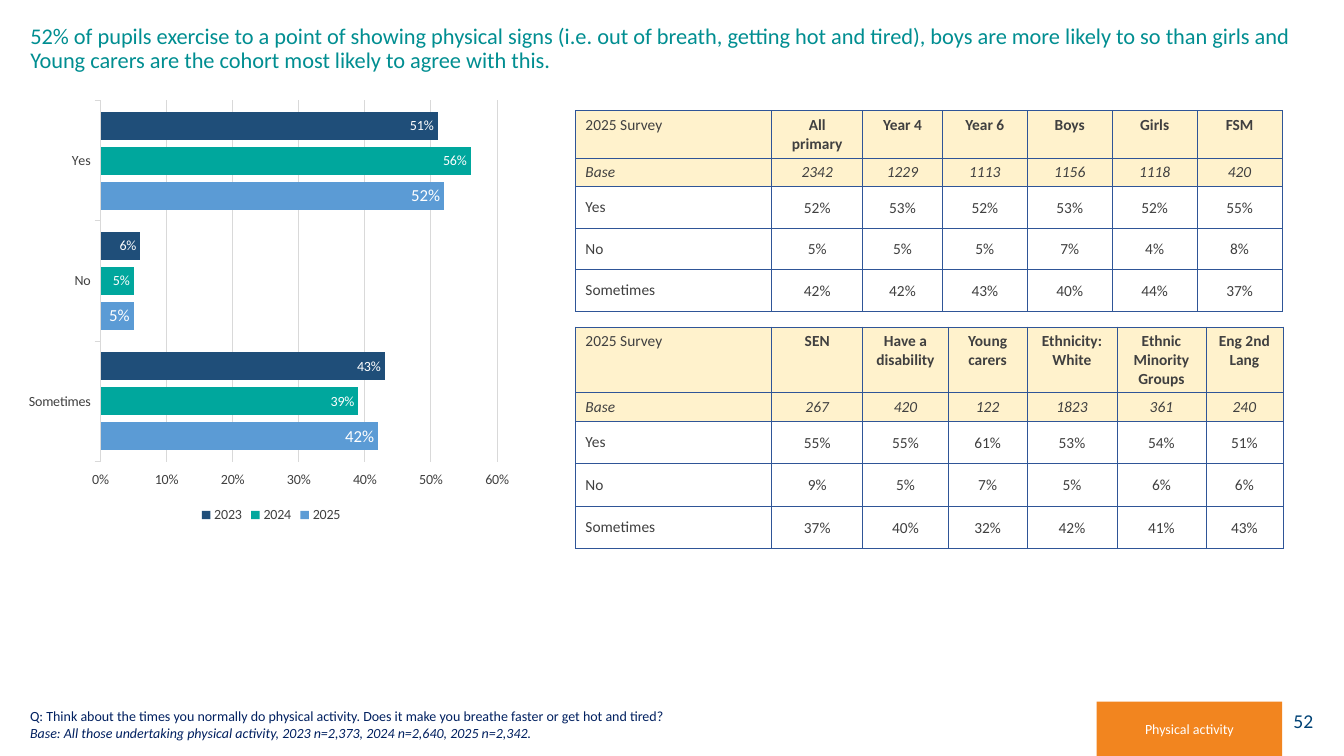
from dataclasses import dataclass

from lxml.etree import SubElement
from pptx import Presentation
from pptx.chart.data import CategoryChartData
from pptx.dml.color import RGBColor
from pptx.enum.chart import XL_CHART_TYPE as ChartType
from pptx.enum.chart import XL_LABEL_POSITION as LabelPosition
from pptx.enum.chart import XL_LEGEND_POSITION as LegendPosition
from pptx.enum.chart import XL_TICK_MARK as TickMark
from pptx.enum.shapes import MSO_SHAPE as Preset
from pptx.enum.text import MSO_ANCHOR as Anchor
from pptx.enum.text import MSO_AUTO_SIZE as AutoSize
from pptx.enum.text import PP_ALIGN as Align
from pptx.oxml import parse_xml
from pptx.oxml.ns import nsdecls, qn
from pptx.slide import Slide
from pptx.util import Cm, Pt

COLOURS = {
    "white": "FFFFFF", "black": "000000", "text": "404040", "title": "008E91",
    "note": "002060", "number": "004376", "tag": "F2851F", "cream": "FFF2CC",
    "border": "2F5597", "grid": "D9D9D9",
}
FONT = "Calibri"


@dataclass
class Box:
    left: float
    top: float
    width: float
    height: float

    def lengths(self) -> tuple:
        return Cm(self.left), Cm(self.top), Cm(self.width), Cm(self.height)


@dataclass
class Block:
    box: Box
    text: str
    fill: str
    colour: str
    size: float
    align: Align


@dataclass
class Year:
    name: str
    values: tuple[float, ...]
    colour: str
    label_size: float


@dataclass
class Survey:
    box: Box
    columns: list[float]
    rows: list[float]
    content: list[list[str]]


ANSWERS = ["Sometimes", "No", "Yes"]
CHART_BOX = Box(0.51, 2.31, 12.65, 10.97)
PLOT = {"x": 0.16, "y": 0.02, "w": 0.79, "h": 0.83}
YEARS = [
    Year("2025", (0.42, 0.05, 0.52), "5B9BD5", 12),
    Year("2024", (0.39, 0.05, 0.56), "00A79D", 10),
    Year("2023", (0.43, 0.06, 0.51), "1F4E79", 10),
]
BLOCKS = [
    Block(Box(31.85, 17.65, 1.5, 1.02), "52", "white", "number", 14, Align.RIGHT),
    Block(Box(27.64, 17.68, 4.67, 1.37), "Physical activity", "tag", "white", 10, Align.CENTER),
]
SURVEYS = [
    Survey(
        Box(14.5, 2.79, 17.83, 5.05),
        [4.95, 2.29, 2.01, 2.14, 2.14, 2.14, 2.14],
        [1.09, 0.66, 1.05, 1.05, 1.05],
        [
            ["2025 Survey", "All primary", "Year 4", "Year 6", "Boys", "Girls", "FSM"],
            ["Base", "2342", "1229", "1113", "1156", "1118", "420"],
            ["Yes", "52%", "53%", "52%", "53%", "52%", "55%"],
            ["No", "5%", "5%", "5%", "7%", "4%", "8%"],
            ["Sometimes", "42%", "42%", "43%", "40%", "44%", "37%"],
        ],
    ),
    Survey(
        Box(14.5, 8.24, 17.83, 5.59),
        [4.95, 2.29, 2.16, 1.98, 2.27, 2.24, 1.94],
        [1.52, 0.66, 1.07, 1.07, 1.07],
        [
            ["2025 Survey", "SEN", "Have a disability", "Young carers",
             "Ethnicity: White", "Ethnic Minority Groups", "Eng 2nd Lang"],
            ["Base", "267", "420", "122", "1823", "361", "240"],
            ["Yes", "55%", "55%", "61%", "53%", "54%", "51%"],
            ["No", "9%", "5%", "7%", "5%", "6%", "6%"],
            ["Sometimes", "37%", "40%", "32%", "42%", "41%", "43%"],
        ],
    ),
]
TITLE = (
    "52% of pupils exercise to a point of showing physical signs (i.e. out of breath, "
    "getting hot and tired), boys are more likely to so than girls and "
    "Young carers are the cohort most likely to agree with this."
)
NOTE = (
    "Q: Think about the times you normally do physical activity. "
    "Does it make you breathe faster or get hot and tired?\n"
    "Base: All those undertaking physical activity, 2023 n=2,373, 2024 n=2,640, 2025 n=2,342."
)


def rgb(name: str) -> RGBColor:
    return RGBColor.from_string(COLOURS.get(name, name))


def style(font, size: float, colour: str, bold: bool = False, italic: bool = False) -> None:
    font.name, font.size, font.bold, font.italic = FONT, Pt(size), bold, italic
    font.color.rgb = rgb(colour)


def add_title(page: Slide) -> None:
    title = page.shapes.title
    title.left, title.top, title.width, title.height = Box(0.51, 0.51, 32.84, 2.49).lengths()
    frame = title.text_frame
    frame.text = TITLE
    frame.auto_size, frame.vertical_anchor = AutoSize.NONE, Anchor.TOP
    para = frame.paragraphs[0]
    para.alignment, para.line_spacing = Align.LEFT, 0.9
    style(para.runs[0].font, 16, "title")


def add_note(page: Slide) -> None:
    frame = page.shapes.add_textbox(*Box(0.51, 17.68, 22.33, 1.12).lengths()).text_frame
    frame.word_wrap, frame.vertical_anchor = True, Anchor.BOTTOM
    frame.text = NOTE
    for index, para in enumerate(frame.paragraphs):
        style(para.runs[0].font, 10, "note", italic=index == 1)


def add_block(page: Slide, block: Block) -> None:
    shape = page.shapes.add_shape(Preset.RECTANGLE, *block.box.lengths())
    shape.shadow.inherit = False
    shape.fill.solid()
    shape.fill.fore_color.rgb = rgb(block.fill)
    shape.line.fill.background()
    shape.text_frame.text = block.text
    shape.text_frame.vertical_anchor = Anchor.MIDDLE
    para = shape.text_frame.paragraphs[0]
    para.alignment = block.align
    style(para.runs[0].font, block.size, block.colour)


def add_bars(page: Slide) -> None:
    data = CategoryChartData(number_format="0%")
    data.categories = ANSWERS
    for year in YEARS:
        data.add_series(year.name, year.values)
    chart = page.shapes.add_chart(ChartType.BAR_CLUSTERED, *CHART_BOX.lengths(), data).chart
    style(chart.font, 10, "black")
    chart.has_title = False
    chart.has_legend = True
    chart.legend.position, chart.legend.include_in_layout = LegendPosition.BOTTOM, False
    style(chart.legend.font, 10, "text")

    plot = chart.plots[0]
    plot.gap_width, plot.overlap, plot.vary_by_categories = 80, -25, False
    for series, year in zip(plot.series, YEARS):
        series.format.fill.solid()
        series.format.fill.fore_color.rgb = rgb(year.colour)
        labels = series.data_labels
        labels.show_value, labels.position = True, LabelPosition.INSIDE_END
        labels.number_format, labels.number_format_is_linked = "0%", False
        style(labels.font, year.label_size, "white")

    answers, shares = chart.category_axis, chart.value_axis
    for axis in (answers, shares):
        axis.major_tick_mark = TickMark.OUTSIDE
        style(axis.tick_labels.font, 10, "text")
    shares.minimum_scale, shares.maximum_scale, shares.major_unit = 0, 0.6, 0.1
    shares.tick_labels.number_format = "0%"
    shares.tick_labels.number_format_is_linked = False
    shares.format.line.fill.background()
    for line in (answers.format.line, shares.major_gridlines.format.line):
        line.color.rgb, line.width = rgb("grid"), Pt(0.75)

    area = chart.element.find(".//" + qn("c:plotArea"))
    for layout in area.findall(qn("c:layout")):
        area.remove(layout)
    manual = SubElement(SubElement(area, qn("c:layout")), qn("c:manualLayout"))
    settings = {"layoutTarget": "inner", "xMode": "edge", "yMode": "edge", **PLOT}
    for tag, value in settings.items():
        SubElement(manual, qn(f"c:{tag}")).set("val", str(value))
    area.insert(0, manual.getparent())


def add_borders(cell) -> None:
    properties = cell._tc.get_or_add_tcPr()
    for index, side in enumerate(("lnL", "lnR", "lnT", "lnB")):
        properties.insert(index, parse_xml(
            f'<a:{side} {nsdecls("a")} w="{Pt(0.5)}"><a:solidFill>'
            f'<a:srgbClr val="{COLOURS["border"]}"/></a:solidFill></a:{side}>'))


def add_survey(page: Slide, survey: Survey) -> None:
    table = page.shapes.add_table(
        len(survey.rows), len(survey.columns), *survey.box.lengths()).table
    for column, width in zip(table.columns, survey.columns):
        column.width = Cm(width)
    for row, height in zip(table.rows, survey.rows):
        row.height = Cm(height)
    for r, texts in enumerate(survey.content):
        for c, text in enumerate(texts):
            cell = table.cell(r, c)
            cell.text = text
            cell.vertical_anchor = Anchor.MIDDLE if r else Anchor.TOP
            if r < 2:
                cell.fill.solid()
                cell.fill.fore_color.rgb = rgb("cream")
            else:
                cell.fill.background()
            if r > 1 and c:
                cell.margin_left = cell.margin_right = cell.margin_top = Cm(0.03)
                cell.margin_bottom = 0
            para = cell.text_frame.paragraphs[0]
            para.alignment = Align.CENTER if c else Align.LEFT
            style(para.runs[0].font, 11, "text", bold=r == 0 and c > 0, italic=r == 1)
            add_borders(cell)


def main() -> None:
    deck = Presentation()
    deck.slide_width, deck.slide_height = Cm(33.87), Cm(19.05)
    page = deck.slides.add_slide(deck.slide_layouts[5])
    add_title(page)
    add_note(page)
    add_bars(page)
    for block in BLOCKS:
        add_block(page, block)
    for survey in SURVEYS:
        add_survey(page, survey)
    deck.save("out.pptx")


if __name__ == "__main__":
    main()
